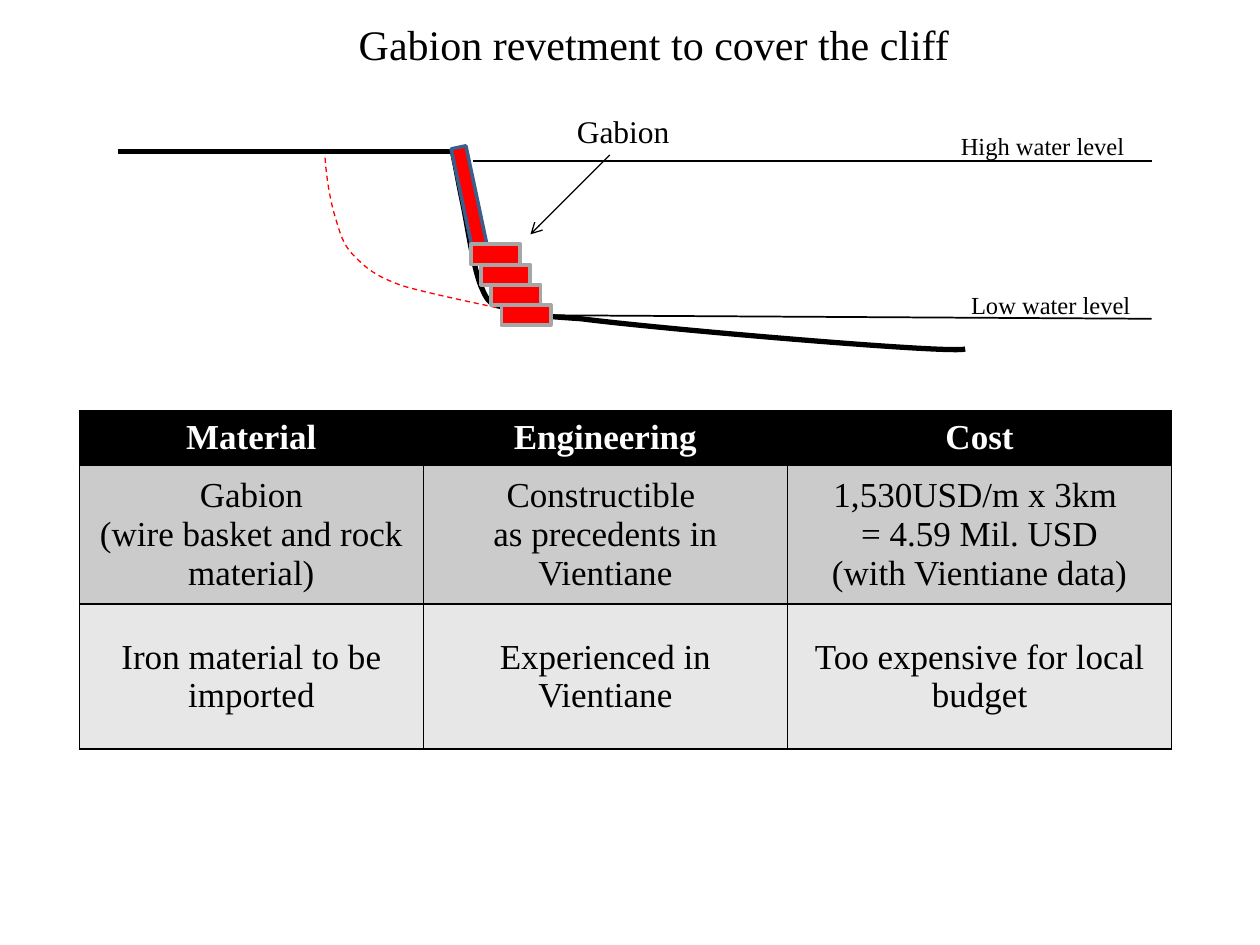
from lxml import etree
from pptx import Presentation
from pptx.dml.color import RGBColor
from pptx.enum.dml import MSO_LINE
from pptx.enum.shapes import MSO_CONNECTOR, MSO_SHAPE
from pptx.enum.text import MSO_ANCHOR, MSO_AUTO_SIZE, PP_ALIGN
from pptx.oxml.ns import qn
from pptx.util import Inches, Pt

STRAIGHT = MSO_CONNECTOR.STRAIGHT
RECTANGLE = MSO_SHAPE.RECTANGLE
DASH = MSO_LINE.DASH
CENTER, LEFT = PP_ALIGN.CENTER, PP_ALIGN.LEFT
MIDDLE = MSO_ANCHOR.MIDDLE
FIT_SHAPE = MSO_AUTO_SIZE.SHAPE_TO_FIT_TEXT

FONT = "Times New Roman"
BLACK = RGBColor(0x00, 0x00, 0x00)
WHITE = RGBColor(0xFF, 0xFF, 0xFF)
RED = RGBColor(0xFF, 0x00, 0x00)
BLUE = RGBColor(0x3A, 0x5F, 0x8C)
GRAY = RGBColor(0xA6, 0xA6, 0xA6)
ROW_FILLS = [BLACK, RGBColor(0xCB, 0xCB, 0xCB), RGBColor(0xE7, 0xE7, 0xE7)]

COLUMN_WIDTHS = [2.73, 2.89, 3.05]
ROW_HEIGHTS = [0.43, 1.1, 1.15]
ROWS = [
    ["Material", "Engineering", "Cost"],
    ["Gabion\n(wire basket and rock material)",
     "Constructible \nas precedents in Vientiane",
     "1,530USD/m x 3km \n= 4.59 Mil. USD\n(with Vientiane data)"],
    ["Iron material to be imported", "Experienced in Vientiane",
     "Too expensive for local budget"],
]

# Each curve is a start point followed by Bezier pieces (two controls, one end).
RIVER_BED = [
    (7.66, 2.77),
    (7.56, 2.81), (5.23, 2.61), (4.61, 2.53),
    (4.02, 2.49), (4.19, 2.49), (4.06, 2.45),
    (3.93, 2.42), (3.89, 2.44), (3.83, 2.3),
    (3.76, 2.16), (3.71, 1.78), (3.67, 1.6),
    (3.63, 1.41), (3.61, 1.28), (3.59, 1.2),
]
SLIP_SURFACE = [
    (4.22, 2.5),
    (3.99, 2.45), (3.44, 2.34), (3.2, 2.27),
    (2.97, 2.19), (2.9, 2.12), (2.81, 2.03),
    (2.72, 1.94), (2.7, 1.85), (2.66, 1.72),
    (2.62, 1.59), (2.59, 1.4), (2.58, 1.25),
]


def write_text(frame, text, size=20, color=BLACK, bold=False, align=CENTER):
    frame.text = text
    for para in frame.paragraphs:
        para.alignment = align
        para.font.name = FONT
        para.font.size = Pt(size)
        para.font.bold = bold
        para.font.color.rgb = color


def add_title(page, text):
    title = page.shapes.title
    title.left, title.top = Inches(0.94), Inches(0.1)
    title.width, title.height = Inches(8.5), Inches(0.51)
    write_text(title.text_frame, text, size=24)
    title.text_frame.vertical_anchor = MSO_ANCHOR.TOP
    title.text_frame.auto_size = FIT_SHAPE


def add_label(page, text, left, top, width, height, **style):
    box = page.shapes.add_textbox(Inches(left), Inches(top), Inches(width), Inches(height))
    frame = box.text_frame
    frame.word_wrap = False
    frame.auto_size = FIT_SHAPE
    write_text(frame, text, **style)


def add_line(page, start, end, width, arrow=False):
    points = [Inches(value) for value in (*start, *end)]
    line = page.shapes.add_connector(STRAIGHT, *points)
    line.line.color.rgb = BLACK
    line.line.width = Pt(width)
    if arrow:
        etree.SubElement(line.line._get_or_add_ln(), qn("a:tailEnd"), type="arrow")
    etree.SubElement(line._element.spPr, qn("a:effectLst"))


def bend_segments(shape):
    """Turn each three straight segments of a freeform into one Bezier piece."""
    segments = list(shape._element.iter(qn("a:lnTo")))
    for first in range(0, len(segments), 3):
        piece = etree.Element(qn("a:cubicBezTo"))
        segments[first].addprevious(piece)
        for segment in segments[first:first + 3]:
            piece.append(segment[0])
            segment.getparent().remove(segment)


def add_curve(page, curve, color, width, dash=None):
    start, *points = [(Inches(x), Inches(y)) for x, y in curve]
    builder = page.shapes.build_freeform(*start)
    builder.add_line_segments(points, close=False)
    shape = builder.convert_to_shape()
    bend_segments(shape)
    shape.shadow.inherit = False
    shape.fill.background()
    shape.line.color.rgb = color
    shape.line.width = Pt(width)
    if dash:
        shape.line.dash_style = dash


def add_block(page, left, top, width, height, line_color, line_width, rotation=0):
    block = page.shapes.add_shape(
        RECTANGLE, Inches(left), Inches(top), Inches(width), Inches(height))
    block.shadow.inherit = False
    block.rotation = rotation
    block.fill.solid()
    block.fill.fore_color.rgb = RED
    block.line.color.rgb = line_color
    block.line.width = Pt(line_width)


def add_borders(cell):
    properties = cell._tc.get_or_add_tcPr()
    for side in ("lnL", "lnR", "lnT", "lnB"):
        border = etree.SubElement(properties, qn(f"a:{side}"), w=str(Pt(1)))
        fill = etree.SubElement(border, qn("a:solidFill"))
        etree.SubElement(fill, qn("a:srgbClr"), val=str(BLACK))


def add_comparison_table(page):
    table = page.shapes.add_table(
        len(ROWS), len(COLUMN_WIDTHS), Inches(0.63), Inches(3.26),
        Inches(sum(COLUMN_WIDTHS)), Inches(sum(ROW_HEIGHTS))).table
    for column, width in zip(table.columns, COLUMN_WIDTHS):
        column.width = Inches(width)
    for index, (row, height, texts) in enumerate(zip(table.rows, ROW_HEIGHTS, ROWS)):
        row.height = Inches(height)
        header = index == 0
        for cell, text in zip(row.cells, texts):
            add_borders(cell)
            cell.fill.solid()
            cell.fill.fore_color.rgb = ROW_FILLS[index]
            cell.vertical_anchor = MIDDLE
            write_text(cell.text_frame, text, color=WHITE if header else BLACK, bold=header)


def add_gabion_steps(page):
    """Stack the baskets; the lowest one lies behind the others."""
    for step in (3, 0, 1, 2):
        add_block(page, 3.74 + 0.08 * step, 1.94 + 0.16 * step, 0.39, 0.16, GRAY, 2.25)


def main():
    deck = Presentation()
    deck.slide_width, deck.slide_height = Inches(10), Inches(7.5)
    page = deck.slides.add_slide(deck.slide_layouts[5])

    add_title(page, "Gabion revetment to cover the cliff")
    add_line(page, (0.94, 1.2), (3.59, 1.2), 3)
    add_line(page, (3.98, 2.5), (9.14, 2.53), 1)
    add_curve(page, RIVER_BED, BLACK, 3)
    add_line(page, (3.75, 1.28), (9.14, 1.28), 1)
    add_block(page, 3.67, 1.16, 0.12, 0.87, BLUE, 2, rotation=348)
    add_label(page, "Low water level", 7.6, 2.25, 1.48, 0.34, size=14)
    add_label(page, "High water level", 7.52, 0.99, 1.51, 0.34, size=14)
    add_comparison_table(page)
    add_curve(page, SLIP_SURFACE, RED, 0.75, dash=DASH)
    add_gabion_steps(page)
    add_label(page, "Gabion", 4.48, 0.84, 0.94, 0.4, size=18, align=LEFT)
    add_line(page, (4.84, 1.23), (4.21, 1.86), 0.75, arrow=True)

    deck.save("out.pptx")


if __name__ == "__main__":
    main()
